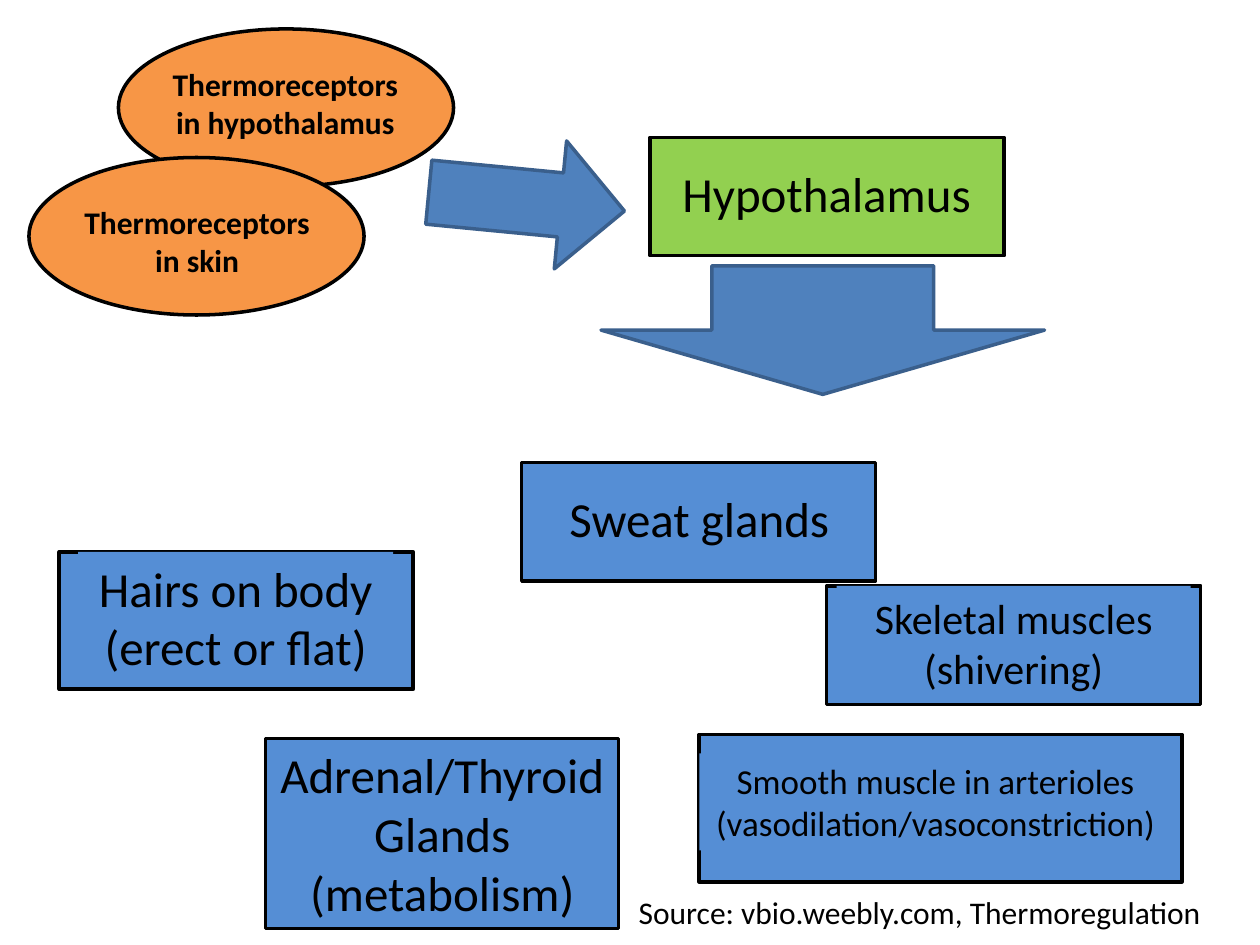
from pptx import Presentation
from pptx.dml.color import RGBColor
from pptx.enum.shapes import MSO_SHAPE
from pptx.enum.text import MSO_ANCHOR, MSO_AUTO_SIZE, PP_ALIGN
from pptx.util import Inches, Pt

ELLIPSE, RECT = MSO_SHAPE.OVAL, MSO_SHAPE.RECTANGLE
RIGHT_ARROW, DOWN_ARROW = MSO_SHAPE.RIGHT_ARROW, MSO_SHAPE.DOWN_ARROW
CENTER, LEFT = PP_ALIGN.CENTER, PP_ALIGN.LEFT
TOP, FIT_SHAPE = MSO_ANCHOR.TOP, MSO_AUTO_SIZE.SHAPE_TO_FIT_TEXT

BLACK = RGBColor(0x00, 0x00, 0x00)
ORANGE = RGBColor(0xF7, 0x96, 0x46)
GREEN = RGBColor(0x92, 0xD0, 0x50)
EFFECTOR_BLUE = RGBColor(0x55, 0x8E, 0xD5)
ARROW_BLUE = RGBColor(0x4F, 0x81, 0xBD)
ARROW_EDGE = RGBColor(0x3A, 0x5F, 0x8C)

RECEPTOR_SIZE = (2.66, 1.25)
RECEPTORS = [(0.94, 0.23), (0.23, 1.25)]
RECEPTOR_LABELS = [
    ("Thermoreceptors in hypothalamus", (1.25, 0.47, 2.03, 0.71)),
    ("Thermoreceptors in skin", (0.55, 1.56, 2.03, 0.71)),
]
EFFECTOR_FRAMES = [
    (0.47, 4.38, 2.81, 1.09),
    (4.14, 3.67, 2.81, 0.94),
    (6.56, 4.65, 2.97, 0.94),
    (5.55, 5.83, 3.83, 1.17),
]
# Text, box, font size, outline width
EFFECTOR_LABELS = [
    ("Hairs on body (erect or flat)", (0.62, 4.38, 2.5, 1.04), 28, None),
    ("Sweat glands", (4.3, 3.83, 2.5, 0.57), 28, None),
    ("Skeletal muscles (shivering)", (6.64, 4.65, 2.81, 0.91), 24, None),
    ("Adrenal/Thyroid Glands (metabolism)", (2.11, 5.86, 2.8, 1.51), 28, 1.75),
    ("Smooth muscle in arterioles (vasodilation/vasoconstriction)",
     (5.55, 5.98, 3.75, 0.77), 20, None),
]


def set_attributes(target, values):
    for name, value in values.items():
        setattr(target, name, value)


def add_block(slide, kind, box, fill, edge=BLACK, width=2, rotation=0):
    block = slide.shapes.add_shape(kind, *map(Inches, box))
    block.shadow.inherit = False
    block.rotation = rotation
    block.fill.solid()
    block.fill.fore_color.rgb = fill
    if width:
        block.line.color.rgb = edge
        block.line.width = Pt(width)
    else:
        block.line.fill.background()
    return block


def write_text(holder, text, size, bold=False, align=CENTER, wrap=True):
    frame = holder.text_frame
    set_attributes(frame, {"word_wrap": wrap, "auto_size": FIT_SHAPE,
                           "vertical_anchor": TOP})
    paragraph = frame.paragraphs[0]
    paragraph.alignment = align
    run = paragraph.add_run()
    run.text = text
    set_attributes(run.font, {"name": "Calibri", "size": Pt(size), "bold": bold})
    run.font.color.rgb = BLACK


def add_label(slide, text, box, size, **style):
    write_text(slide.shapes.add_textbox(*map(Inches, box)), text, size, **style)


def main():
    deck = Presentation()
    deck.slide_width, deck.slide_height = Inches(10), Inches(7.5)
    slide = deck.slides.add_slide(deck.slide_layouts[6])

    # Receptors
    for position in RECEPTORS:
        add_block(slide, ELLIPSE, position + RECEPTOR_SIZE, ORANGE)
    for text, box in RECEPTOR_LABELS:
        add_label(slide, text, box, 18, bold=True)

    # Control centre
    add_block(slide, RIGHT_ARROW, (3.4, 1.09, 1.56, 1.02), ARROW_BLUE,
              ARROW_EDGE, rotation=5.5)
    add_block(slide, RECT, (5.16, 1.09, 2.81, 0.94), GREEN)
    add_label(slide, "Hypothalamus", (5.31, 1.25, 2.5, 0.57), 28)

    # Effectors: frames first, filled labels on top
    for box in EFFECTOR_FRAMES:
        add_block(slide, RECT, box, EFFECTOR_BLUE)
    for text, box, size, width in EFFECTOR_LABELS:
        label = add_block(slide, RECT, box, EFFECTOR_BLUE, width=width)
        write_text(label, text, size)
    add_block(slide, DOWN_ARROW, (4.77, 2.11, 3.52, 1.02), ARROW_BLUE, ARROW_EDGE)

    # Source line
    add_label(slide, "Source: vbio.weebly.com, Thermoregulation",
              (4.97, 7.04, 4.72, 0.4), 18, align=LEFT, wrap=False)

    deck.save("out.pptx")


if __name__ == "__main__":
    main()
